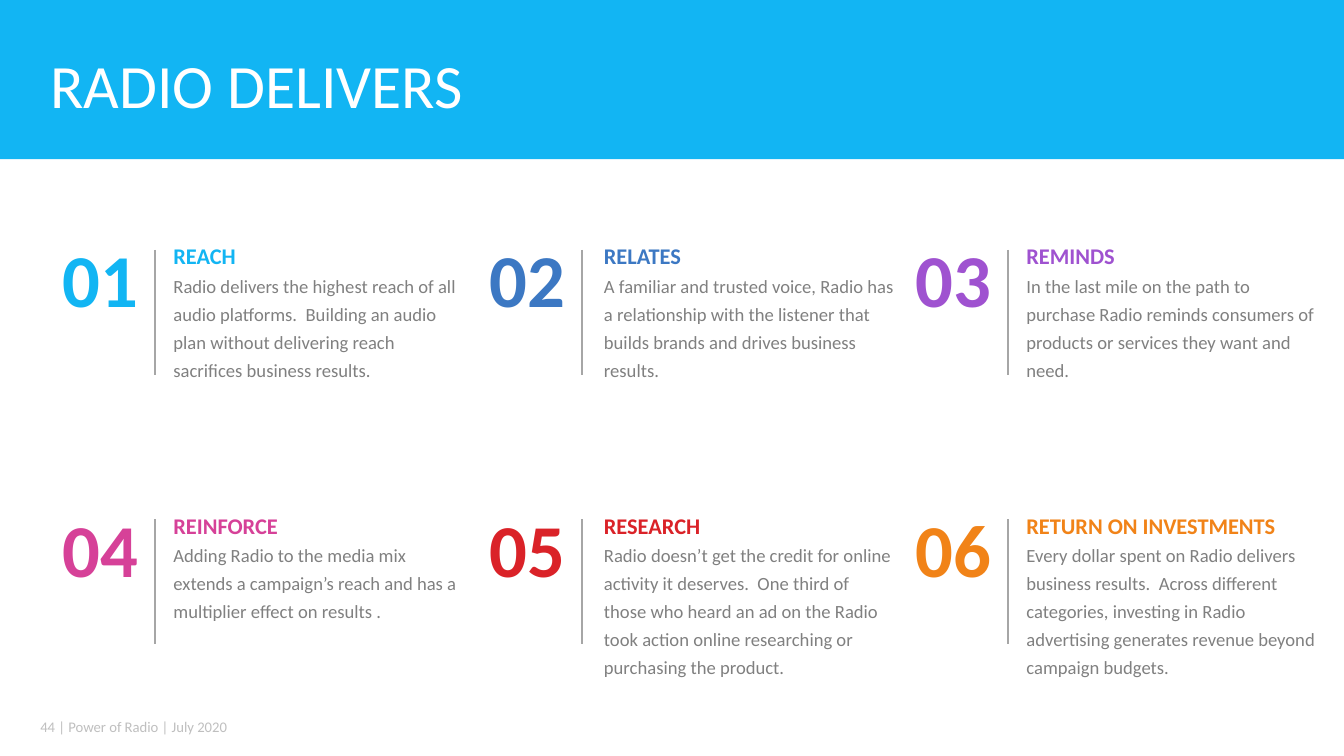
import pptx
import pptx.util
import pptx.dml.color
import pptx.enum.shapes
import pptx.enum.text
from lxml import etree
from pptx.util import Inches

COLORS = {
    "sky": "12B5F3", "blue": "3C78C3", "violet": "9F52D0",
    "pink": "D64198", "red": "DA2228", "orange": "F18318",
    "white": "FFFFFF", "body": "808080", "rule": "A6A6A6", "foot": "BFBFBF",
}
ALIGN = pptx.enum.text.PP_ALIGN
ANCHOR = pptx.enum.text.MSO_ANCHOR


def tint(name):
    return pptx.dml.color.RGBColor.from_string(COLORS[name])


def add_text(left, top, width, height, runs, anchor=ANCHOR.MIDDLE,
             inset=(0.1, 0.05), align=ALIGN.LEFT, space=1.0, wrap=True):
    """Add a one-paragraph box; runs are (text, size, color, bold), one per line."""
    box = slide.shapes.add_textbox(Inches(left), Inches(top), Inches(width), Inches(height))
    frame = box.text_frame
    frame.word_wrap = wrap
    frame.vertical_anchor = anchor
    frame.margin_left = frame.margin_right = Inches(inset[0])
    frame.margin_top = frame.margin_bottom = Inches(inset[1])
    para = frame.paragraphs[0]
    para.alignment = align
    para.line_spacing = space
    for index, (text, size, color, bold) in enumerate(runs):
        if index:
            para.add_line_break()
        run = para.add_run()
        run.text = text
        run.font.name = "Calibri"
        run.font.size = pptx.util.Pt(size)
        run.font.bold = bold
        run.font.color.rgb = tint(color)


deck = pptx.Presentation()
deck.slide_width = Inches(13.33)
deck.slide_height = Inches(7.5)
slide = deck.slides.add_slide(deck.slide_layouts[6])

# Header and footer
band = slide.shapes.add_shape(pptx.enum.shapes.MSO_SHAPE.RECTANGLE,
                              0, 0, deck.slide_width, Inches(1.58))
band.shadow.inherit = False
band.fill.solid()
band.fill.fore_color.rgb = tint("sky")
band.line.fill.background()
add_text(0.4, 0.15, 12.5, 1.45, [("RADIO DELIVERS", 44, "white", False)], space=0.9)
add_text(0.27, 7.01, 2.99, 0.4,
         [("44 | Power of Radio | July 2020", 10.5, "foot", False)], inset=(0.13, 0.07))

# Six benefits, three to a row
benefits = [
    ("REACH", "sky", "Radio delivers the highest reach of all audio platforms.  Building an "
     "audio plan without delivering reach sacrifices business results."),
    ("RELATES", "blue", "A familiar and trusted voice, Radio has a relationship with the "
     "listener that builds brands and drives business results."),
    ("REMINDS", "violet", "In the last mile on the path to purchase Radio reminds consumers of "
     "products or services they want and need."),
    ("REINFORCE", "pink", "Adding Radio to the media mix extends a campaign’s reach and has a "
     "multiplier effect on results ."),
    ("RESEARCH", "red", "Radio doesn’t get the credit for online activity it deserves.  One "
     "third of those who heard an ad on the Radio took action online researching or "
     "purchasing the product."),
    ("RETURN ON INVESTMENTS", "orange", "Every dollar spent on Radio delivers business "
     "results.  Across different categories, investing in Radio advertising generates "
     "revenue beyond campaign budgets."),
]
text_lefts = [1.72, 5.99, 10.18]

for index, (head, color, body) in enumerate(benefits):
    row, col = divmod(index, 3)
    left = 0.5 + 4.23 * col
    top = 2.26 + 2.67 * row
    add_text(left, top, 1, 1, [(f"{index + 1:02}", 53.3, color, True)],
             align=ALIGN.CENTER, wrap=False)
    rule = slide.shapes.add_connector(
        pptx.enum.shapes.MSO_CONNECTOR.STRAIGHT, Inches(left + 1.04), Inches(top + 0.22),
        Inches(left + 1.04), Inches(top + 1.46))
    rule.line.color.rgb = tint("rule")
    rule.line.width = pptx.util.Pt(1.5)
    etree.SubElement(rule.element.spPr, pptx.oxml.ns.qn("a:effectLst"))
    add_text(text_lefts[col], top + 0.08, 2.89, 1.72 if len(body) > 140 else 1.44,
             [(head, 16, color, True), (body, 13.3, "body", False)],
             anchor=ANCHOR.TOP, inset=(0, 0), space=1.25)

deck.save("out.pptx")
